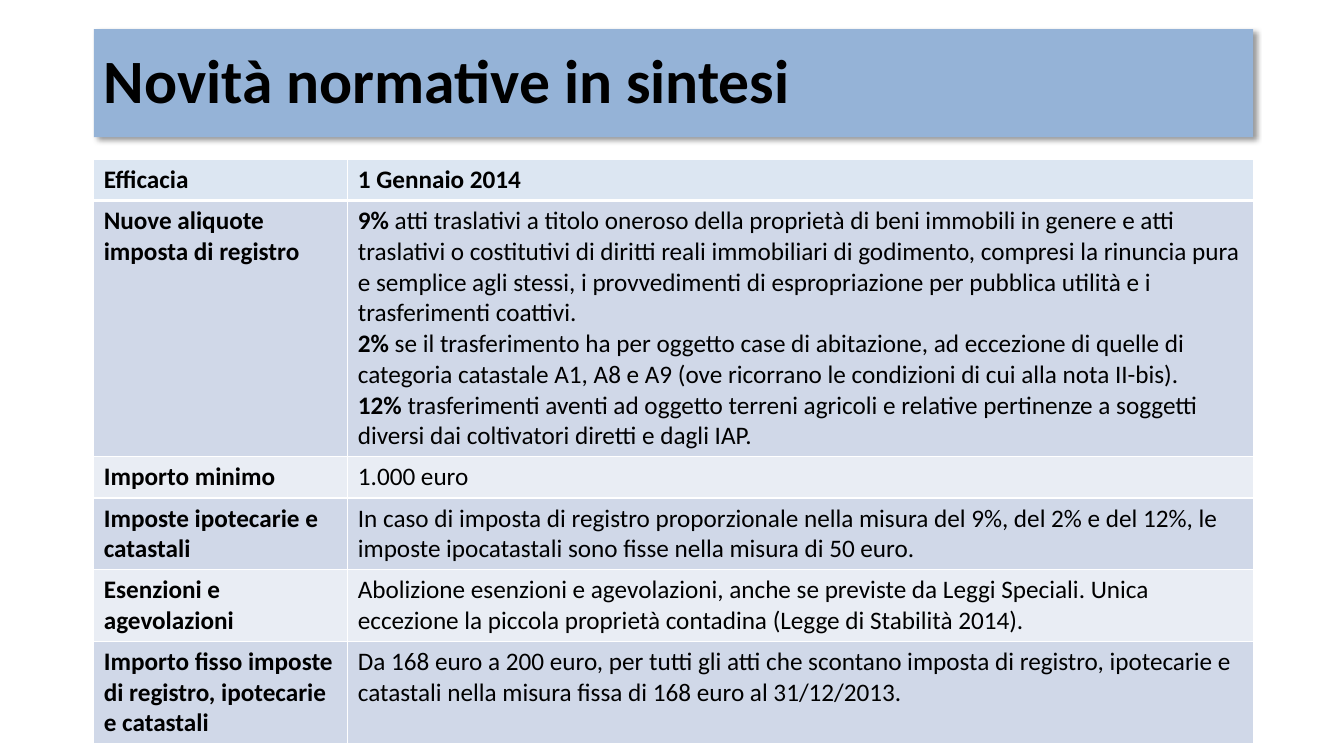
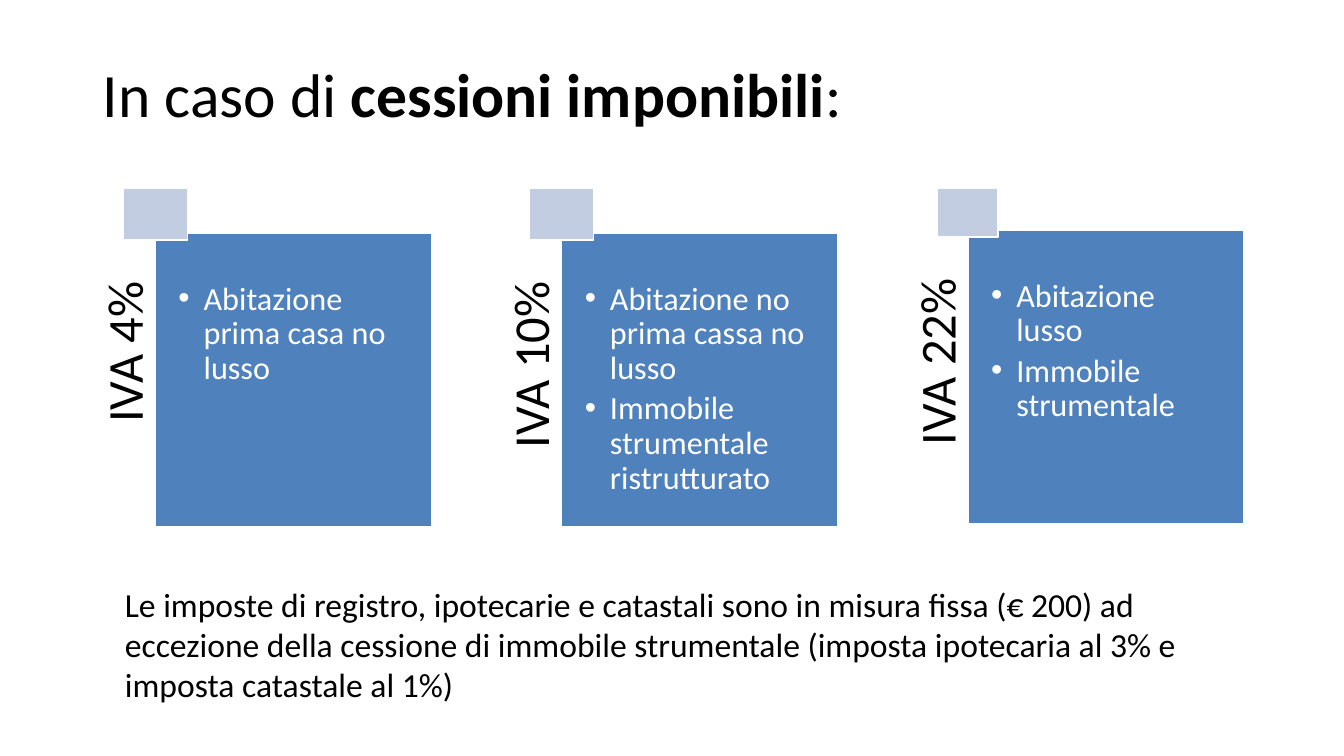
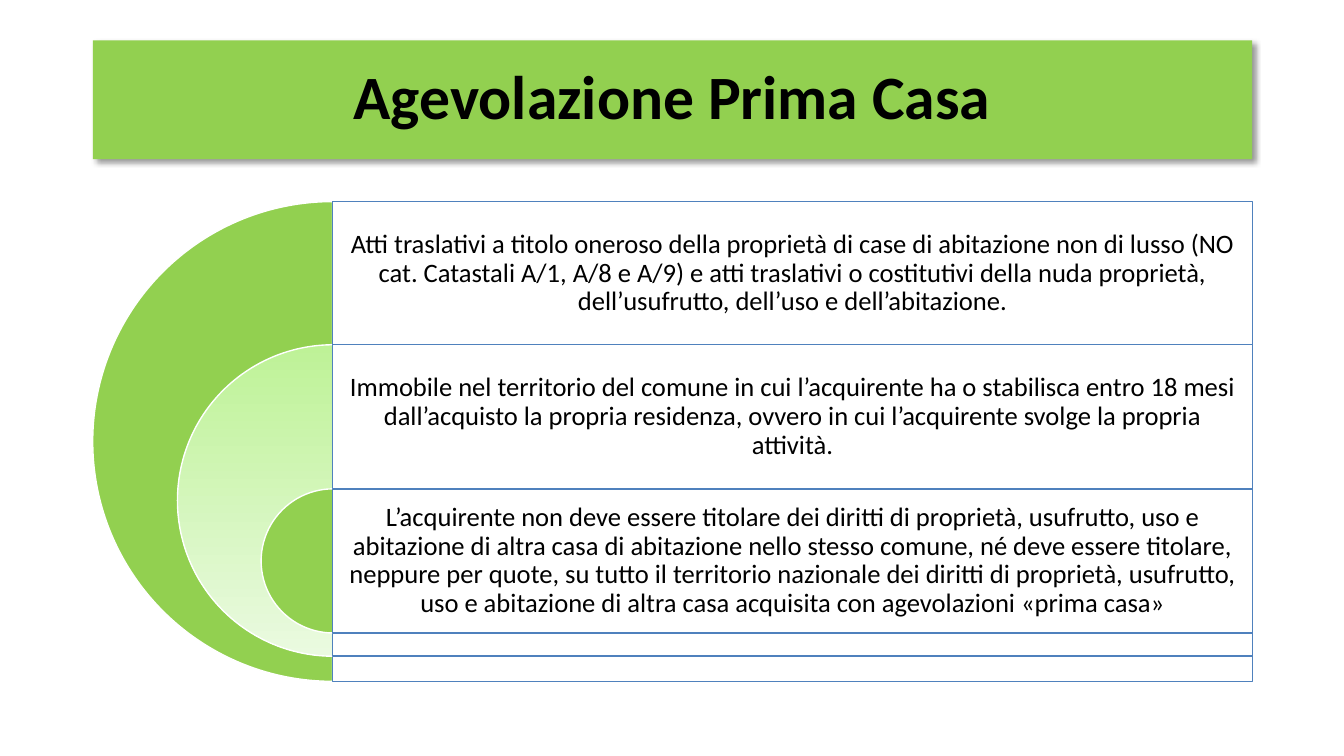
"""Builds three slides on Italian property transfer taxes."""
from lxml import etree
from pptx import Presentation
from pptx import util as u
from pptx.dml.color import RGBColor
from pptx.enum import shapes, text
from pptx.oxml.ns import qn

PX = 9144
LEFT = text.PP_ALIGN.LEFT
CENTER = text.PP_ALIGN.CENTER
RIGHT = text.PP_ALIGN.RIGHT
TOP = text.MSO_ANCHOR.TOP
MIDDLE = text.MSO_ANCHOR.MIDDLE


def px(*lengths):
    return [u.Emu(length * PX) for length in lengths]


def colour(value):
    return RGBColor.from_string(value)


def node(parent, tag, **attributes):
    return etree.SubElement(parent, qn(tag), {k: str(v) for k, v in attributes.items()})


class Slides:
    """Holds the shared style and the slide being drawn."""

    FONT = "Calibri"
    BLACK, WHITE, BLUE, GREEN = "000000", "FFFFFF", "4F81BD", "92D050"

    def __init__(self):
        self.deck = Presentation()
        self.deck.slide_width, self.deck.slide_height = px(1333, 750)
        self.page = None

    def new_page(self):
        self.page = self.deck.slides.add_slide(self.deck.slide_layouts[5])

    def fill_text(self, frame, lines, size, ink=BLACK, align=LEFT, spacing=0.9, after=0,
                  bullets=False):
        for index, line in enumerate(lines):
            para = frame.add_paragraph() if index else frame.paragraphs[0]
            para.alignment = align
            para.line_spacing = spacing
            para.space_after = u.Pt(after)
            for number, part in enumerate(line.split("*")):
                if part:
                    span = para.add_run()
                    span.text = part
                    span.font.name = self.FONT
                    span.font.size = u.Pt(size)
                    span.font.bold = number % 2 == 1
                    span.font.color.rgb = colour(ink)
            if bullets:
                properties = para._p.get_or_add_pPr()
                properties.set("marL", str(25 * PX))
                properties.set("indent", str(-25 * PX))
                node(properties, "a:buFont", typeface="Arial")
                node(properties, "a:buChar", char="•")

    def frame(self, box, margins=(10, 5, 10, 5), anchor=TOP):
        frame = box.text_frame
        frame.word_wrap = True
        frame.auto_size = text.MSO_AUTO_SIZE.NONE
        frame.vertical_anchor = anchor
        (frame.margin_left, frame.margin_top,
         frame.margin_right, frame.margin_bottom) = px(*margins)
        return frame

    def title(self, line, place, fill=None, align=LEFT):
        box = self.page.shapes.title
        box.left, box.top, box.width, box.height = px(*place)
        self.fill_text(self.frame(box, anchor=MIDDLE), [line], 44, align=align)
        if fill:
            box.fill.solid()
            box.fill.fore_color.rgb = colour(fill)
            effects = node(box._element.spPr, "a:effectLst")
            shadow = node(effects, "a:outerShdw", blurRad=u.Pt(4), dist=u.Pt(3),
                          dir=2700000, algn="tl", rotWithShape=0)
            node(node(shadow, "a:srgbClr", val=self.BLACK), "a:alpha", val=40000)

    def label(self, lines, place, size, margins=(10, 5, 10, 5), anchor=TOP, rotation=0, **style):
        box = self.page.shapes.add_textbox(*px(*place))
        box.rotation = rotation
        self.fill_text(self.frame(box, margins, anchor), lines, size, **style)

    def shape(self, kind, place, fill, line=WHITE, opacity=None):
        box = self.page.shapes.add_shape(kind, *px(*place))
        box.shadow.inherit = False
        if isinstance(fill, tuple):
            box.fill.gradient()
            box.fill.gradient_angle = 270
            for stop, shade in zip(box.fill.gradient_stops, fill):
                stop.color.rgb = colour(shade)
        else:
            box.fill.solid()
            box.fill.fore_color.rgb = colour(fill)
        if opacity:
            node(box._element.spPr.find(".//" + qn("a:srgbClr")), "a:alpha", val=opacity * 1000)
        box.line.color.rgb = colour(line)
        box.line.width = u.Pt(1)
        return box

    def rect(self, place, fill, **style):
        return self.shape(shapes.MSO_SHAPE.RECTANGLE, place, fill, **style)

    def half_disc(self, place, fill):
        disc = self.shape(shapes.MSO_SHAPE.PIE, place, fill)
        disc.adjustments[0], disc.adjustments[1] = 54, 162

    def borders(self, cell, **widths):
        properties = cell._tc.get_or_add_tcPr()
        for side in "LRTB":
            line = node(properties, "a:ln" + side, w=u.Pt(widths.get(side, 1)))
            node(node(line, "a:solidFill"), "a:srgbClr", val=self.WHITE)

    def table(self, rows, place, widths, fills):
        table = self.page.shapes.add_table(len(rows), len(widths), *px(*place)).table
        for column, width in zip(table.columns, px(*widths)):
            column.width = width
        for r, (row, fill) in enumerate(zip(rows, fills)):
            for c, lines in enumerate(row):
                cell = table.cell(r, c)
                self.borders(cell, T=3 if r == 1 else 1, B=3 if r == 0 else 1)
                cell.fill.solid()
                cell.fill.fore_color.rgb = colour(fill)
                self.fill_text(cell.text_frame, lines, 18, spacing=1.0)


def summary(slides):
    slides.new_page()
    slides.title("*Novità normative in sintesi*", (93, 29, 1150, 107), "95B3D7")
    rows = [
        (["*Efficacia*"], ["*1 Gennaio 2014*"]),
        (["*Nuove aliquote imposta di registro*"], [
            "*9%* atti traslativi a titolo oneroso della proprietà di beni immobili in genere e atti "
            "traslativi o costitutivi di diritti reali immobiliari di godimento, compresi la rinuncia "
            "pura e semplice agli stessi, i provvedimenti di espropriazione per pubblica utilità e i "
            "trasferimenti coattivi.",
            "*2%* se il trasferimento ha per oggetto case di abitazione, ad eccezione di quelle di "
            "categoria catastale A1, A8 e A9 (ove ricorrano le condizioni di cui alla nota II-bis).",
            "*12%* trasferimenti aventi ad oggetto terreni agricoli e relative pertinenze a soggetti "
            "diversi dai coltivatori diretti e dagli IAP."]),
        (["*Importo minimo*"], ["1.000 euro"]),
        (["*Imposte ipotecarie e catastali*"], [
            "In caso di imposta di registro proporzionale nella misura del 9%, del 2% e del 12%, le "
            "imposte ipocatastali sono fisse nella misura di 50 euro."]),
        (["*Esenzioni e agevolazioni*"], [
            "Abolizione esenzioni e agevolazioni, anche se previste da Leggi Speciali. Unica "
            "eccezione la piccola proprietà contadina (Legge di Stabilità 2014)."]),
        (["*Importo fisso imposte di registro, ipotecarie e catastali*"], [
            "Da 168 euro a 200 euro, per tutti gli atti che scontano imposta di registro, ipotecarie "
            "e catastali nella misura fissa di 168 euro al 31/12/2013."]),
    ]
    dark, light = "D0D8E8", "E9EDF4"
    slides.table(rows, (93, 158, 1150, 246), (252, 898),
                 ("DCE6F2", dark, light, dark, light, dark))


def vat_rates(slides):
    slides.new_page()
    slides.title("In caso di *cessioni imponibili*:", (92, 40, 1150, 113))
    panels = [
        ("IVA 4%", 231, 32, ["Abitazione prima casa no lusso"]),
        ("IVA 10%", 231, 32, ["Abitazione no prima cassa no lusso",
                              "Immobile strumentale ristrutturato"]),
        ("IVA 22%", 228, 30, ["Abitazione lusso", "Immobile strumentale"]),
    ]
    side, tab_top = 292, 187
    for index, (rate, top, overhang, items) in enumerate(panels):
        left = 154 + 403 * index
        slides.label([rate], (left - 174, top + 118, side, 55), 36, (0, 0, 49, 0),
                     rotation=270, align=RIGHT)
        panel = slides.rect((left, top, 274, side), slides.BLUE)
        slides.fill_text(slides.frame(panel, (23, 49, 23, 23)), items, 23, slides.WHITE,
                         after=4, bullets=True)
        slides.rect((left - overhang, tab_top, 2 * overhang, top + 7 - tab_top), "C2CDE1")
    slides.label(["Le imposte di registro, ipotecarie e catastali sono in misura fissa (€ 200) ad "
                  "eccezione della cessione di immobile strumentale (imposta ipotecaria al 3% e "
                  "imposta catastale al 1%)"], (114, 574, 1128, 131), 24, spacing=1.0)


def first_home(slides):
    slides.new_page()
    slides.title("*Agevolazione Prima Casa*", (92, 40, 1150, 118), slides.GREEN, CENTER)
    bands = [
        (200, 476, slides.GREEN,
         "Atti traslativi a titolo oneroso della proprietà di case di abitazione non di lusso (NO "
         "cat. Catastali A/1, A/8 e A/9) e atti traslativi o costitutivi della nuda proprietà, "
         "dell’usufrutto, dell’uso e dell’abitazione."),
        (342, 309, ("BEF297", "EAFAE0"),
         "Immobile nel territorio del comune in cui l’acquirente ha o stabilisca entro 18 mesi "
         "dall’acquisto la propria residenza, ovvero in cui l’acquirente svolge la propria attività."),
        (485, 143, slides.GREEN,
         "L’acquirente non deve essere titolare dei diritti di proprietà, usufrutto, uso e "
         "abitazione di altra casa di abitazione nello stesso comune, né deve essere titolare, "
         "neppure per quote, su tutto il territorio nazionale dei diritti di proprietà, usufrutto, "
         "uso e abitazione di altra casa acquisita con agevolazioni «prima casa»"),
    ]
    axis, width = 330, 912
    for top, size, fill, line in bands:
        slides.half_disc((axis - size // 2, top, size, size), fill)
        slides.rect((axis, top, width, size), slides.WHITE, line=slides.BLUE, opacity=90)
        slides.label([line], (axis, top, width, 143), 19, (8, 8, 8, 8), MIDDLE, align=CENTER)


def main():
    slides = Slides()
    summary(slides)
    vat_rates(slides)
    first_home(slides)
    slides.deck.save("out.pptx")


if __name__ == "__main__":
    main()
